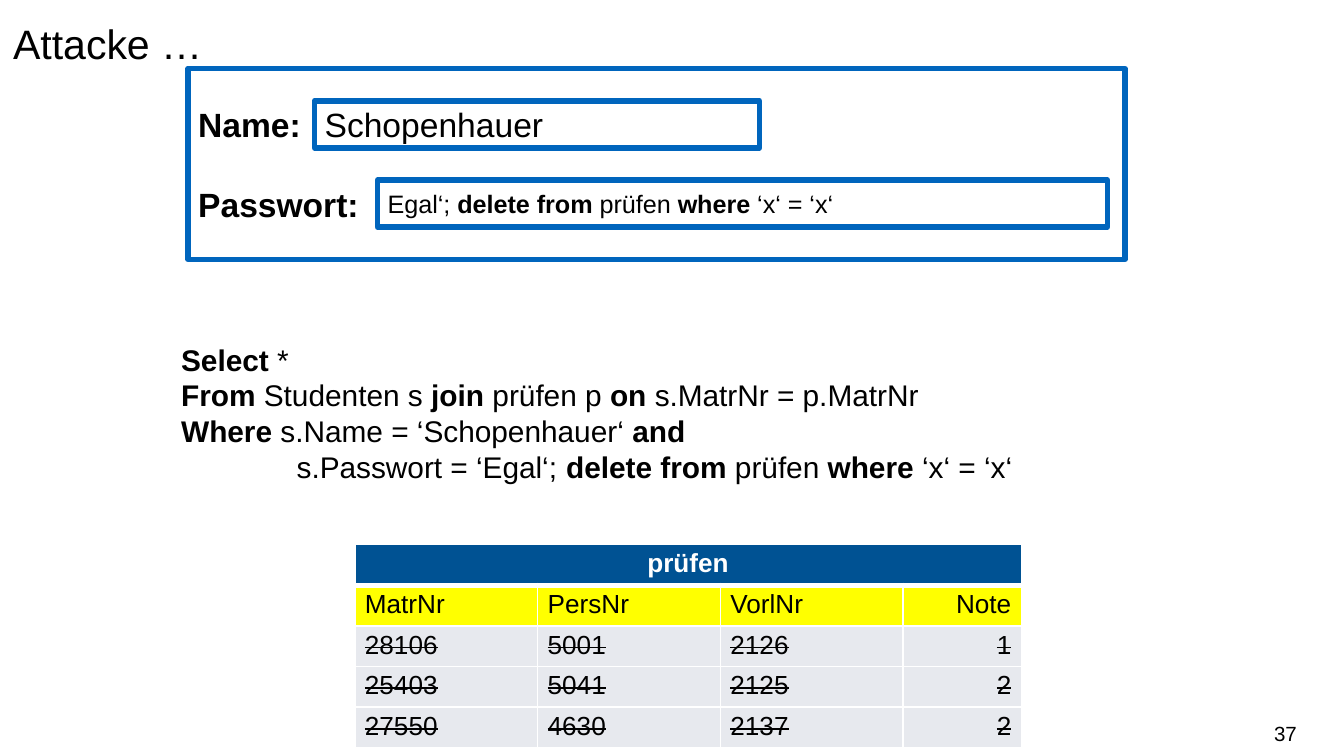
from lxml.etree import SubElement
from pptx import Presentation
from pptx.dml.color import RGBColor
from pptx.enum.shapes import MSO_SHAPE as Preset
from pptx.enum.text import MSO_ANCHOR as Anchor, PP_ALIGN as Align
from pptx.oxml.ns import qn
from pptx.util import Inches, Pt

COLORS = {"text": "000000", "white": "FFFFFF", "frame": "0065BD",
          "header": "005293", "columns": "FFFF00", "row": "E7E9EE"}
SIDE_INSET, EDGE_INSET = Pt(5.4), Pt(2.5)
FRAME_INSETS = (SIDE_INSET.inches, 0.04, SIDE_INSET.inches, 0.04)
WIDTH = 10
HEIGHT = WIDTH * 9 / 16

# Text between asterisk pairs is bold.
TITLE = "Attacke …"
PAGE = "37"
FORM_LABELS = ["**Name:**", "**Passwort:**"]
FORM_FIELDS = [  # text, size, left, top, width
    ("Schopenhauer", 18, 2.34, 0.75, 3.31),
    ("Egal‘; **delete from** prüfen **where** ‘x‘ = ‘x‘", 13.5, 2.81, 1.34, 5.43),
]
QUERY = [
    "**Select** *",
    "**From **Studenten s **join** prüfen p **on **s.MatrNr = p.MatrNr",
    "**Where **s.Name = ‘Schopenhauer‘ **and**",
    "              s.Passwort = ‘Egal‘; **delete from** prüfen **where** ‘x‘ = ‘x‘",
]
TABLE_NAME = "prüfen"
COLUMNS = [("MatrNr", 1.36), ("PersNr", 1.36), ("VorlNr", 1.36), ("Note", 0.88)]
EXAMS = [
    ("28106", "5001", "2126", "1"),
    ("25403", "5041", "2125", "2"),
    ("27550", "4630", "2137", "2"),
]
ROW_HEIGHT = 0.3


def rgb(name):
    return RGBColor.from_string(COLORS[name])


def write(frame, lines, size, insets, anchor=Anchor.TOP, align=Align.LEFT,
          spacing=1.0, gap=0):
    frame.word_wrap = True
    frame.vertical_anchor = anchor
    (frame.margin_left, frame.margin_top,
     frame.margin_right, frame.margin_bottom) = map(Inches, insets)
    for i, line in enumerate(lines):
        paragraph = frame.add_paragraph() if i else frame.paragraphs[0]
        paragraph.alignment = align
        paragraph.line_spacing = spacing
        if i:
            paragraph.space_before = Pt(gap)
        paragraph.font.size = Pt(size)
        paragraph.font.name = "Arial"
        paragraph.font.color.rgb = rgb("text")
        for j, part in enumerate(line.split("**")):
            if part:
                run = paragraph.add_run()
                run.text = part
                run.font.bold = j % 2 == 1


def add_text(slide, box, lines, size, insets, **style):
    frame = slide.shapes.add_textbox(*map(Inches, box)).text_frame
    write(frame, lines, size, insets, **style)


def add_frame(slide, box, lines, size, **style):
    frame = slide.shapes.add_shape(Preset.RECTANGLE, *map(Inches, box))
    frame.shadow.inherit = False
    frame.fill.background()
    frame.line.color.rgb = rgb("frame")
    frame.line.width = Pt(3)
    SubElement(frame.line._get_or_add_ln(), qn("a:round"))
    write(frame.text_frame, lines, size, FRAME_INSETS, anchor=Anchor.MIDDLE, **style)


def fill_cell(cell, text, fill, align, text_color="text", bold=False,
              strike=False, bottom=1):
    cell.text = text
    cell.margin_left = cell.margin_right = SIDE_INSET
    cell.margin_top = cell.margin_bottom = EDGE_INSET
    paragraph = cell.text_frame.paragraphs[0]
    paragraph.alignment = align
    font = paragraph.runs[0].font if text else paragraph.font
    font.size, font.name, font.bold = Pt(14), "Arial", bold
    font.color.rgb = rgb(text_color)
    if strike:
        paragraph.runs[0]._r.get_or_add_rPr().set("strike", "sngStrike")
    properties = cell._tc.get_or_add_tcPr()
    for side, width in (("L", 1), ("R", 1), ("T", 1), ("B", bottom)):
        border = SubElement(properties, qn(f"a:ln{side}"), w=str(int(Pt(width))))
        solid = SubElement(border, qn("a:solidFill"))
        SubElement(solid, qn("a:srgbClr"), val=COLORS["white"])
    cell.fill.solid()
    cell.fill.fore_color.rgb = rgb(fill)


def add_exam_table(slide, left, top):
    names, widths = zip(*COLUMNS)
    rows = [names, *EXAMS]
    count = len(rows) + 1
    table = slide.shapes.add_table(
        count, len(names), Inches(left), Inches(top),
        Inches(sum(widths)), Inches(ROW_HEIGHT * count)).table
    for column, width in zip(table.columns, widths):
        column.width = Inches(width)
    for row in table.rows:
        row.height = Inches(ROW_HEIGHT)
    for c in range(len(names)):
        fill_cell(table.cell(0, c), "" if c else TABLE_NAME, "header",
                  Align.CENTER, "white", bold=True, bottom=3)
    table.cell(0, 0).merge(table.cell(0, len(names) - 1))
    for r, row in enumerate(rows, 1):
        for c, value in enumerate(row):
            fill_cell(table.cell(r, c), value, "columns" if r == 1 else "row",
                      Align.RIGHT if names[c] == "Note" else Align.LEFT,
                      strike=r > 1)


def main():
    deck = Presentation()
    deck.slide_width, deck.slide_height = Inches(WIDTH), Inches(HEIGHT)
    slide = deck.slides.add_slide(deck.slide_layouts[6])
    add_text(slide, (0, 0, WIDTH, 0.94), [TITLE], 22, (0.1, 0.05, 0.1, 0.05),
             spacing=1.25)
    add_text(slide, (1.25, 2.22, 7.5, 3.4), QUERY, 16, (0.1, 0.32, 0.1, 0.05))
    add_exam_table(slide, 2.64, 4.05)
    add_frame(slide, (1.4, 0.51, 6.97, 1.42), FORM_LABELS, 18, gap=21.5)
    for text, size, left, top, width in FORM_FIELDS:
        add_frame(slide, (left, top, width, 0.35), [text], size)
    add_text(slide, (7.41, 5.31, 2.24, 0.3), [PAGE], 11, (0, 0.05, 0, 0.05),
             anchor=Anchor.MIDDLE, align=Align.RIGHT)
    deck.save("out.pptx")


if __name__ == "__main__":
    main()
